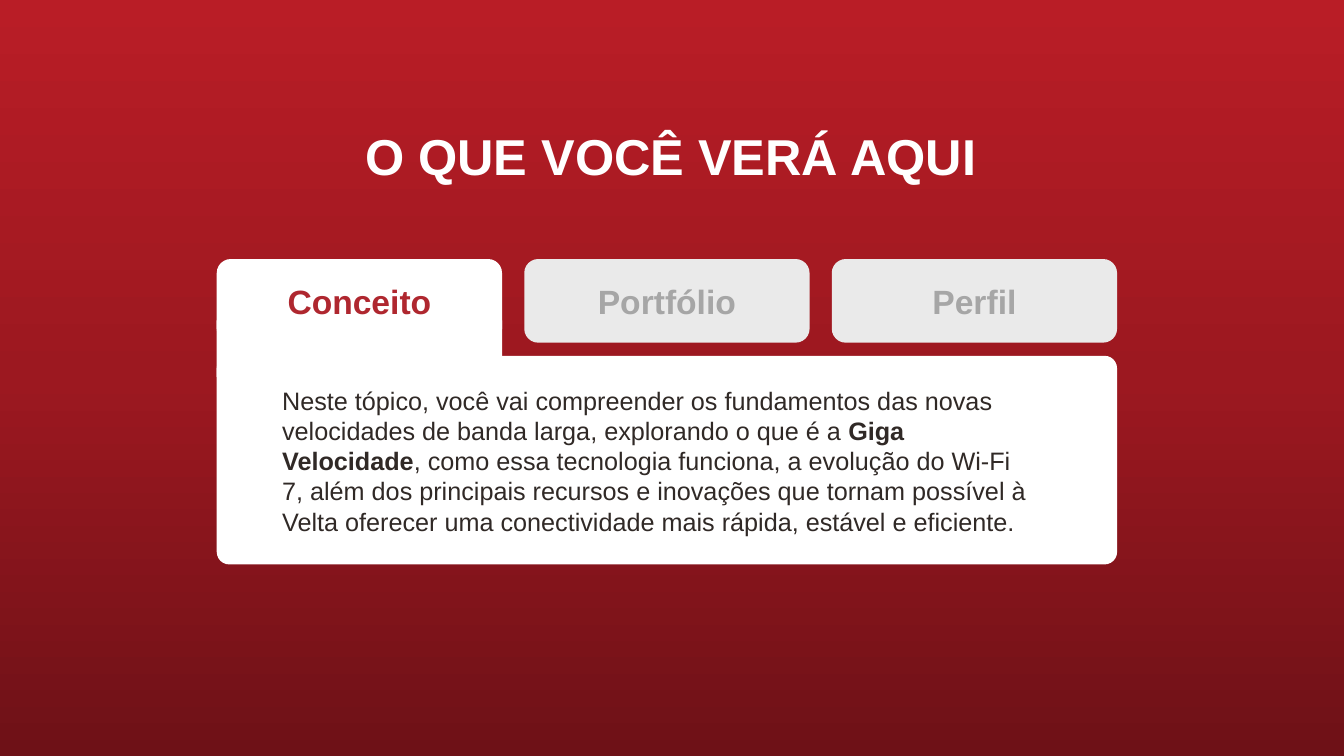
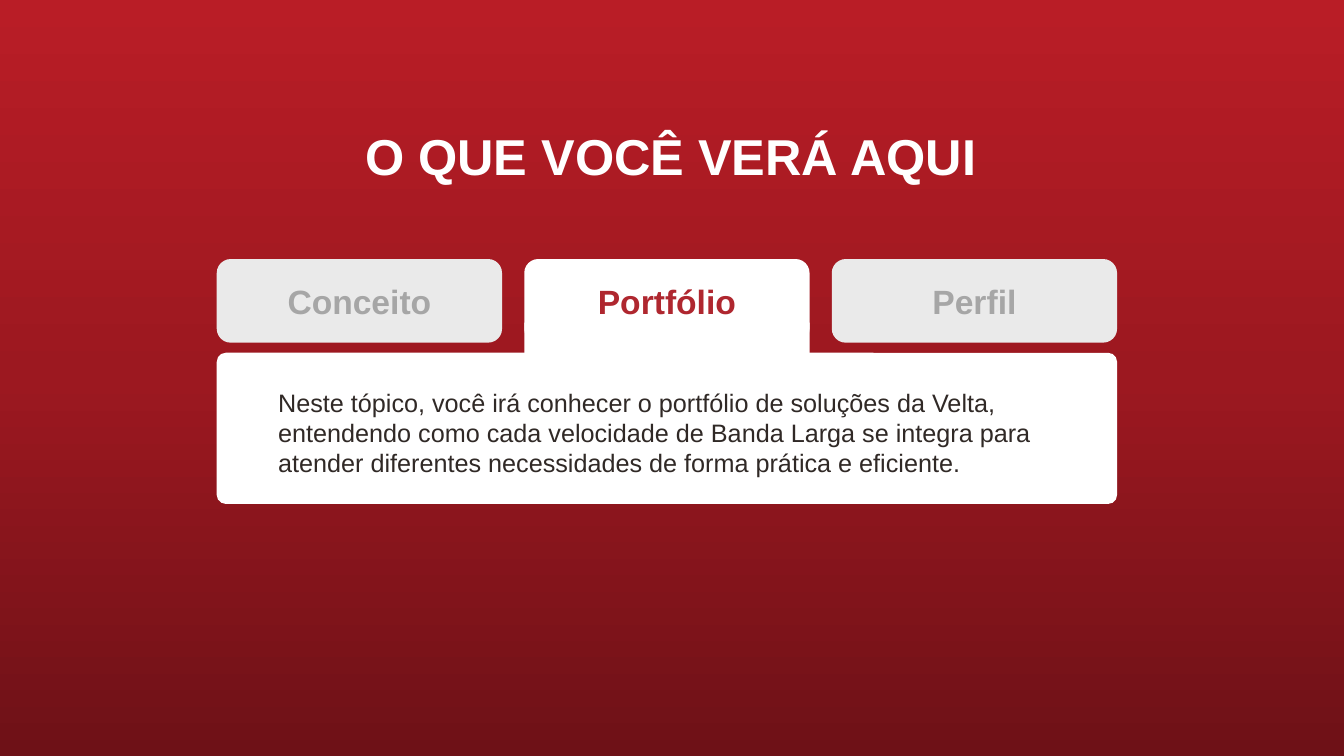
from dataclasses import dataclass

from lxml.etree import SubElement
from pptx import Presentation
from pptx.dml.color import RGBColor
from pptx.enum.shapes import MSO_SHAPE as Shape
from pptx.enum.text import MSO_ANCHOR as Anchor, MSO_AUTO_SIZE as Fit, PP_ALIGN as Align
from pptx.oxml.ns import qn
from pptx.util import Inches, Pt

# Palette and type
WHITE = RGBColor(0xFF, 0xFF, 0xFF)
PALE = RGBColor(0xEA, 0xEA, 0xEA)
GREY = RGBColor(0xA6, 0xA6, 0xA6)
RED = RGBColor(0xAF, 0x27, 0x2F)
INK = RGBColor(0x30, 0x29, 0x26)
FADE = (
    (0, RGBColor(0x6E, 0x11, 0x17)),
    (50, RGBColor(0x9C, 0x18, 0x20)),
    (100, RGBColor(0xB9, 0x1D, 0x26)),
)
FONT = "Arial"

# Grid, in inches: three tab columns over one panel
WIDE, HIGH = 13.33, 7.5
LEFT, COL, GAP = 2.15, 2.83, 0.22
TAB_TOP, TAB_HIGH = 2.57, 0.83
TABS = ("Conceito", "Portfólio", "Perfil")
SPAN = len(TABS) * COL + (len(TABS) - 1) * GAP
TITLE = "O QUE VOCÊ VERÁ AQUI"
TITLE_BOX = (3.09, 1.19, 7.13, 0.71)


@dataclass(frozen=True)
class Box:
    left: float
    top: float
    wide: float
    high: float

    def emu(self) -> tuple:
        return tuple(Inches(n) for n in (self.left, self.top, self.wide, self.high))


@dataclass(frozen=True)
class Topic:
    tab: int  # index of the open tab
    top: float  # panel top
    high: float  # panel height
    neck: Box  # joins the open tab to the panel
    text: Box
    runs: tuple  # (wording, bold)


def col(i: int) -> float:
    return LEFT + i * (COL + GAP)


TOPICS = (
    Topic(0, 3.53, 2.07, Box(col(0), 3.18, COL, 0.56), Box(2.7, 3.77, 7.7, 1.62), (
        ("Neste tópico, você vai compreender os fundamentos das novas velocidades "
         "de banda larga, explorando o que é a ", False),
        ("Giga Velocidade", True),
        (", como essa tecnologia funciona, a evolução do Wi-Fi 7, além dos "
         "principais recursos e inovações que tornam possível à Velta oferecer "
         "uma conectividade mais rápida, estável e eficiente.", False),
    )),
    Topic(1, 3.5, 1.5, Box(col(1), 3.2, COL, 0.4), Box(2.66, 3.79, 8.42, 1.01), (
        ("Neste tópico, você irá conhecer o portfólio de soluções da Velta, "
         "entendendo como cada velocidade de Banda Larga se integra para atender "
         "diferentes necessidades de forma prática e eficiente.", False),
    )),
)


def style(run, size: int, ink: RGBColor, bold: bool) -> None:
    font = run.font
    font.name, font.size, font.bold = FONT, Pt(size), bold
    font.color.rgb = ink


def label(frame, text: str, size: int, ink: RGBColor) -> None:
    """Bold centred line of text."""
    frame.text = text
    line = frame.paragraphs[0]
    line.alignment = Align.CENTER
    style(line.runs[0], size, ink, True)


def block(slide, kind: Shape, box: Box, fill: RGBColor):
    shape = slide.shapes.add_shape(kind, *box.emu())
    shape.shadow.inherit = False
    shape.fill.solid()
    shape.fill.fore_color.rgb = fill
    shape.line.fill.background()
    return shape


def backdrop(master) -> None:
    """Vertical red gradient shared by every slide."""
    fill = master.background.fill
    fill.gradient()
    fill.gradient_angle = 90
    stops = master.element.find(".//" + qn("a:gsLst"))
    for stop in list(stops):
        stops.remove(stop)
    for share, tone in FADE:
        stop = SubElement(stops, qn("a:gs"), pos=str(share * 1000))
        SubElement(stop, qn("a:srgbClr"), val=str(tone))


def head(slide) -> None:
    title = slide.shapes.title
    title.left, title.top, title.width, title.height = Box(*TITLE_BOX).emu()
    frame = title.text_frame
    frame.auto_size = Fit.NONE
    frame.vertical_anchor = Anchor.TOP
    label(frame, TITLE, 36, WHITE)


def panel(slide, topic: Topic) -> None:
    card = block(slide, Shape.ROUNDED_RECTANGLE,
                 Box(LEFT, topic.top, SPAN, topic.high), WHITE)
    card.adjustments[0] = 0.06
    block(slide, Shape.RECTANGLE, topic.neck, WHITE)


def tabs(slide, active: int) -> None:
    for i, name in enumerate(TABS):
        fill, ink = (WHITE, RED) if i == active else (PALE, GREY)
        tab = block(slide, Shape.FLOWCHART_ALTERNATE_PROCESS,
                    Box(col(i), TAB_TOP, COL, TAB_HIGH), fill)
        tab.text_frame.vertical_anchor = Anchor.MIDDLE
        label(tab.text_frame, name, 24, ink)


def body(slide, topic: Topic) -> None:
    frame = slide.shapes.add_textbox(*topic.text.emu()).text_frame
    frame.word_wrap = True
    for text, bold in topic.runs:
        run = frame.paragraphs[0].add_run()
        run.text = text
        style(run, 18, INK, bold)


def main() -> None:
    deck = Presentation()
    deck.slide_width, deck.slide_height = Inches(WIDE), Inches(HIGH)
    backdrop(deck.slide_master)
    layout = deck.slide_layouts.get_by_name("Title Only")
    for topic in TOPICS:
        slide = deck.slides.add_slide(layout)
        head(slide)
        panel(slide, topic)
        tabs(slide, topic.tab)
        body(slide, topic)
    deck.save("out.pptx")


if __name__ == "__main__":
    main()
